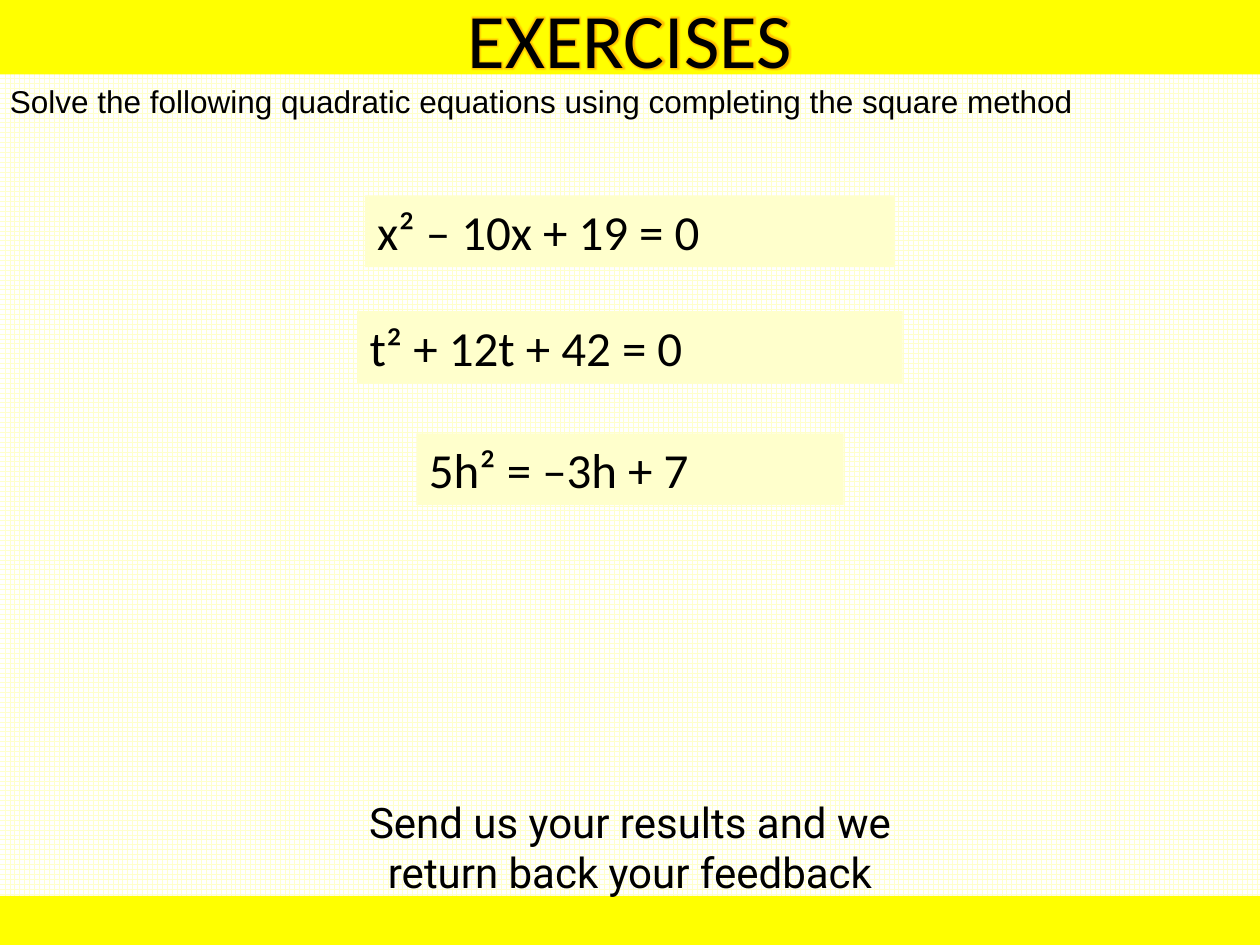
from lxml import etree
from pptx import Presentation
from pptx.dml.color import RGBColor
from pptx.enum.dml import MSO_PATTERN
from pptx.enum.shapes import MSO_SHAPE
from pptx.enum.text import MSO_ANCHOR, PP_ALIGN
from pptx.oxml import parse_xml
from pptx.util import Inches, Pt

RECT = MSO_SHAPE.RECTANGLE
TOP, MIDDLE = MSO_ANCHOR.TOP, MSO_ANCHOR.MIDDLE
LEFT, CENTER, JUSTIFY = PP_ALIGN.LEFT, PP_ALIGN.CENTER, PP_ALIGN.JUSTIFY
A = "http://schemas.openxmlformats.org/drawingml/2006/main"

THEME = {
    "paper": "FFFFFF", "cream": "FFFFCC", "band": "FFFF00", "ink": "000000",
    "outline": "FF0000", "glow": "FFC000",
    "title": ("Calibri", 44), "equation": ("Calibri", 28),
    "task": ("Arial", 18), "closing": ("Roboto", 24),
}
WIDTH, HEIGHT = 10, 7.5


def color(name):
    return RGBColor.from_string(THEME[name])


def add_block(box, text="", style="task", fill=None, align=LEFT, anchor=TOP):
    """Add a filled rectangle, or a plain text box when there is no fill."""
    box = [Inches(v) for v in box]
    if fill:
        sp = s.shapes.add_shape(RECT, *box)
        sp.shadow.inherit = False
        sp.fill.solid()
        sp.fill.fore_color.rgb = color(fill)
        sp.line.fill.background()
    else:
        sp = s.shapes.add_textbox(*box)
    if text:
        tf = sp.text_frame
        tf.word_wrap = True
        tf.vertical_anchor = anchor
        tf.text = text
        p = tf.paragraphs[0]
        p.alignment = align
        font = p.runs[0].font
        font.name, size = THEME[style]
        font.size = Pt(size)
        font.color.rgb = color("ink")
    return sp


prs = Presentation()
prs.slide_width, prs.slide_height = Inches(WIDTH), Inches(HEIGHT)
s = prs.slides.add_slide(prs.slide_layouts[6])

paper = s.background.fill
paper.patterned()
paper.pattern = MSO_PATTERN.LARGE_GRID
paper.fore_color.rgb = color("cream")
paper.back_color.rgb = color("paper")

# Equations, centred on the slide
for top, width, equation in [
    (1.55, 4.21, "x² – 10x + 19 = 0"),
    (2.47, 4.33, "t² + 12t + 42 = 0"),
    (3.44, 3.39, "5h² = –3h + 7"),
]:
    add_block(((WIDTH - width) / 2, top, width, 0.57), equation, "equation", "cream")

# Title and footer bands
title = add_block((0, 0, WIDTH, 0.59), "EXERCISES", "title", "band", CENTER, MIDDLE)
add_block((0, HEIGHT - 0.39, WIDTH, 0.39), fill="band")

rPr = title.text_frame.paragraphs[0].runs[0].font._element
outline = parse_xml(
    f'<a:ln xmlns:a="{A}" w="{Pt(0.75)}"><a:solidFill>'
    f'<a:srgbClr val="{THEME["outline"]}"/></a:solidFill></a:ln>')
rPr.insert(0, outline)
effects = etree.Element(f"{{{A}}}effectLst")
glow = etree.SubElement(effects, f"{{{A}}}glow", rad=str(Pt(3)))
etree.SubElement(glow, f"{{{A}}}srgbClr", val=THEME["glow"])
rPr.insert(2, effects)

# Task and closing text
add_block((-0.02, 0.6, WIDTH, 0.71),
          "Solve the following quadratic equations using completing the square method",
          "task", align=JUSTIFY)
add_block(((WIDTH - 5.22) / 2, 6.27, 5.22, 0.91),
          "Send us your results and we return back your feedback",
          "closing", align=CENTER)

prs.save("out.pptx")
